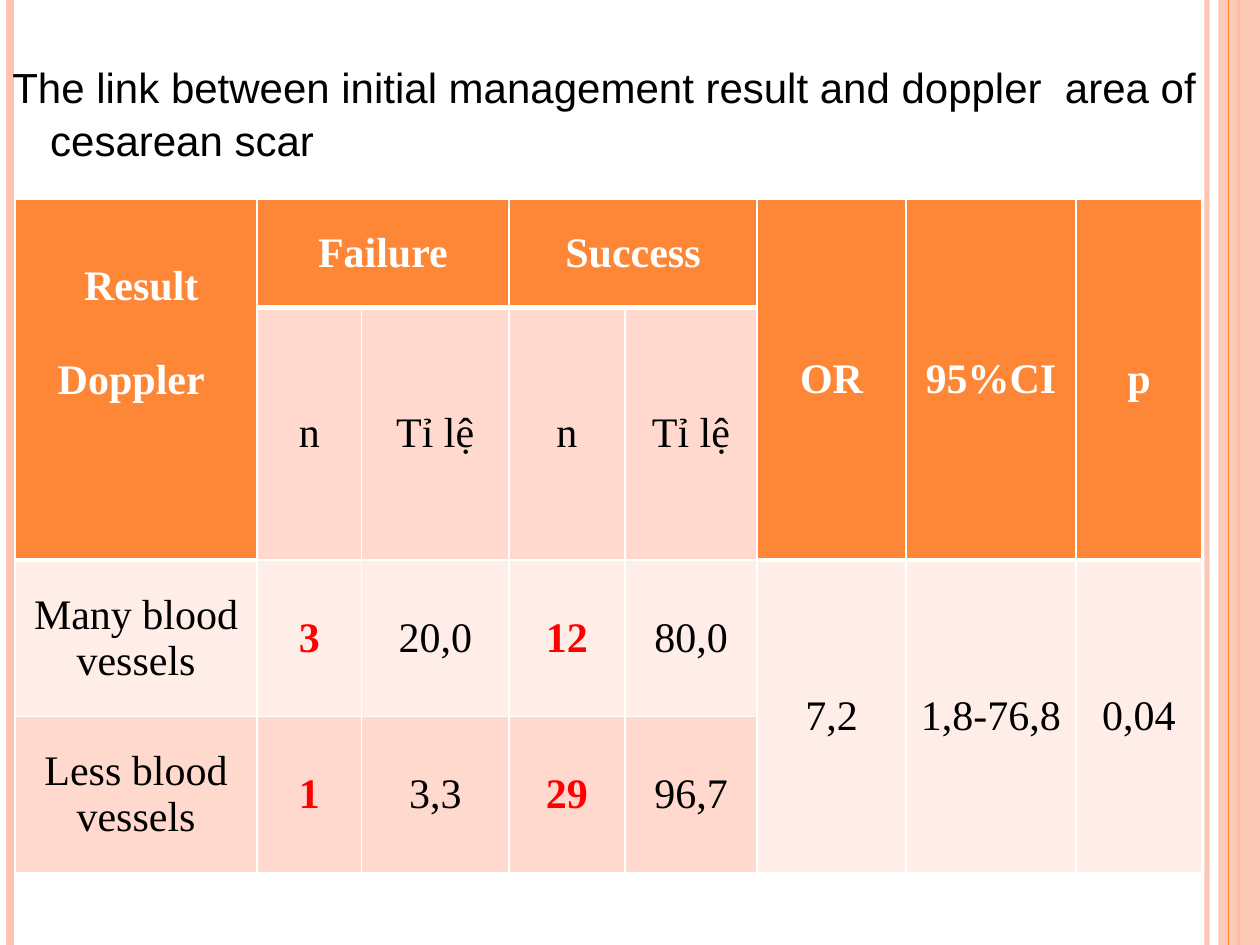
from lxml import etree
from pptx import Presentation
from pptx import util as u
from pptx.dml.color import RGBColor
from pptx.enum import shapes, text
from pptx.oxml.ns import qn

ORANGE, PEACH, WHITE, BLACK, RED = "FE8637", "FEC3AE", "FFFFFF", "000000", "FF0000"
BAND_DARK, BAND_LIGHT = "FFD9CE", "FFEDE8"
SLIDE_HEIGHT = 7.5

COLUMNS = [1.92, 0.83, 1.17, 0.92, 1.05, 1.18, 1.35, 1]
ROWS = [0.86, 1.94, 1.24, 1.24]
CELLS = [
    [" Result\nDoppler ", "Failure", "", "Success", "", "OR", "95%CI", "p"],
    ["", "n", "Tỉ lệ", "n", "Tỉ lệ", "", "", ""],
    ["Many blood vessels", "3", "20,0", "12", "80,0", "7,2", "1,8-76,8", "0,04"],
    ["Less blood vessels", "1", "3,3", "29", "96,7", "", "", ""],
]
TALL_HEADERS = (0, 5, 6, 7)
COUNT_COLUMNS = (1, 3)
# First and last cell of each merged area, as (row, column)
MERGES = ([((0, column), (1, column)) for column in TALL_HEADERS]
          + [((0, column), (0, column + 1)) for column in COUNT_COLUMNS]
          + [((2, column), (3, column)) for column in TALL_HEADERS[1:]])


def color(value):
    return RGBColor.from_string(value)


def set_opacity(element, percent):
    fill = element.find(".//" + qn("a:srgbClr"))
    etree.SubElement(fill, qn("a:alpha"), val=str(percent * 1000))


def add_rule(page, x, width, line_color, opacity=100):
    """Draw a vertical line over the full height of the slide."""
    rule = page.shapes.add_connector(
        shapes.MSO_CONNECTOR.STRAIGHT,
        u.Inches(x), 0, u.Inches(x), u.Inches(SLIDE_HEIGHT))
    rule.line.color.rgb = color(line_color)
    rule.line.width = u.Pt(width)
    properties = rule._element.spPr
    if opacity < 100:
        set_opacity(properties, opacity)
    etree.SubElement(properties, qn("a:effectLst"))


def add_band(page, x, width, fill_color, opacity):
    band = page.shapes.add_shape(
        shapes.MSO_SHAPE.RECTANGLE,
        u.Inches(x), 0, u.Inches(width), u.Inches(SLIDE_HEIGHT))
    band.shadow.inherit = False
    band.fill.solid()
    band.fill.fore_color.rgb = color(fill_color)
    band.line.fill.background()
    set_opacity(band._element.spPr, opacity)


def write(frame, content, font="Times New Roman", size=24, text_color=BLACK,
          bold=False, align=text.PP_ALIGN.CENTER, gap=0):
    """Write one paragraph per line; gap is the space between them in points."""
    for index, line in enumerate(content.split("\n")):
        para = frame.add_paragraph() if index else frame.paragraphs[0]
        para.alignment = align
        if index and gap:
            para.space_before = u.Pt(gap)
        span = para.add_run()
        span.text = line
        span.font.name, span.font.size = font, u.Pt(size)
        span.font.bold = bold
        span.font.color.rgb = color(text_color)


def add_title(page):
    box = page.shapes.add_textbox(
        u.Inches(0), u.Inches(0.42), u.Inches(9.67), u.Inches(6.66))
    frame = box.text_frame
    frame.word_wrap = True
    write(frame, "The link between initial management result and doppler  area of "
          "cesarean scar", font="Arial", align=text.PP_ALIGN.LEFT)
    para = frame.paragraphs[0]
    para.line_spacing = 1.05
    # Hanging indent
    properties = para._p.get_or_add_pPr()
    properties.set("marL", str(u.Inches(0.3)))
    properties.set("indent", str(-u.Inches(0.3)))


def set_borders(cell, bottom):
    properties = cell._tc.get_or_add_tcPr()
    widths = {"a:lnL": 1, "a:lnR": 1, "a:lnT": 1, "a:lnB": bottom}
    for position, (tag, width) in enumerate(widths.items()):
        line = etree.Element(qn(tag), w=str(u.Pt(width)))
        fill = etree.SubElement(line, qn("a:solidFill"))
        etree.SubElement(fill, qn("a:srgbClr"), val=WHITE)
        properties.insert(position, line)


def add_result_table(page):
    table = page.shapes.add_table(
        len(ROWS), len(COLUMNS), u.Inches(0.12), u.Inches(1.58),
        u.Inches(sum(COLUMNS)), u.Inches(sum(ROWS))).table
    for column, width in zip(table.columns, COLUMNS):
        column.width = u.Inches(width)
    for row, height in zip(table.rows, ROWS):
        row.height = u.Inches(height)
    for first, last in MERGES:
        table.cell(*first).merge(table.cell(*last))

    for r, contents in enumerate(CELLS):
        for c, content in enumerate(contents):
            cell = table.cell(r, c)
            header = r == 0 or (r == 1 and c in TALL_HEADERS)
            count = r > 1 and c in COUNT_COLUMNS
            cell.fill.solid()
            cell.fill.fore_color.rgb = color(
                ORANGE if header else BAND_LIGHT if r == 2 else BAND_DARK)
            set_borders(cell, bottom=3 if header else 1)
            cell.vertical_anchor = text.MSO_ANCHOR.MIDDLE
            if content:
                write(cell.text_frame, content, bold=header or count, gap=27,
                      text_color=WHITE if header else RED if count else BLACK)
    # The corner heading sits above the middle of its cell
    table.cell(0, 0).margin_bottom = u.Inches(0.78)


def main():
    deck = Presentation()
    deck.slide_width, deck.slide_height = u.Inches(10), u.Inches(SLIDE_HEIGHT)
    page = deck.slides.add_slide(deck.slide_layouts[6])

    # Side decoration
    add_rule(page, 9.58, 3, PEACH, opacity=93)
    add_rule(page, 0.08, 4.5, PEACH)
    add_rule(page, 9.83, 1.5, ORANGE)
    add_band(page, 9.67, 0.33, PEACH, opacity=87)
    add_rule(page, 9.75, 0.75, ORANGE)

    # Content
    add_title(page)
    add_result_table(page)
    deck.save("out.pptx")


if __name__ == "__main__":
    main()
